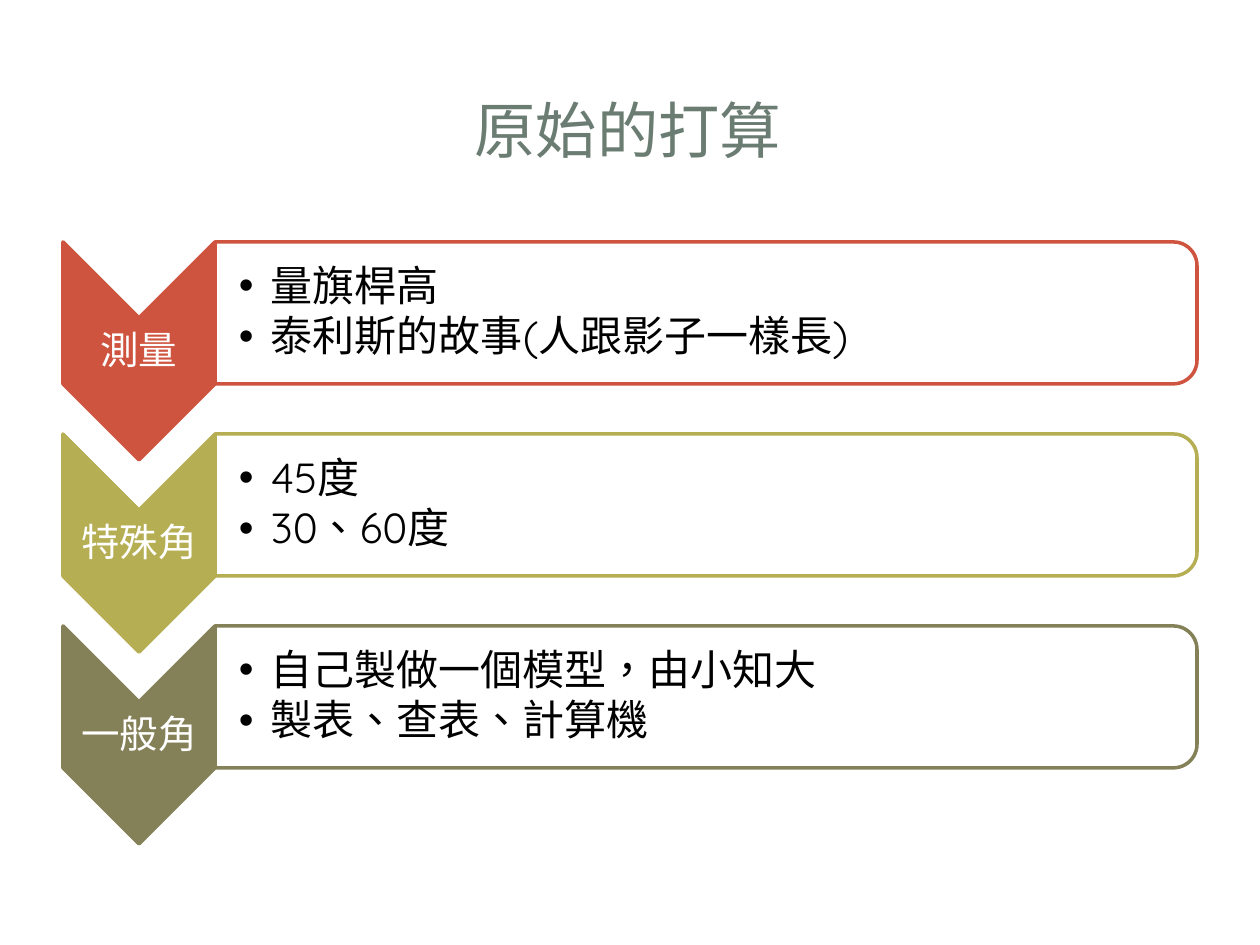
from lxml import etree
from pptx import Presentation
from pptx.dml.color import RGBColor
from pptx.enum.lang import MSO_LANGUAGE_ID
from pptx.enum.shapes import MSO_SHAPE
from pptx.enum.text import MSO_ANCHOR, PP_ALIGN
from pptx.oxml.ns import qn
from pptx.util import Pt

PX = 914400 // 126
CHEVRON, BAR = MSO_SHAPE.CHEVRON, MSO_SHAPE.ROUND_2_SAME_RECTANGLE
CENTER, LEFT = PP_ALIGN.CENTER, PP_ALIGN.LEFT
MIDDLE = MSO_ANCHOR.MIDDLE
CHINESE = MSO_LANGUAGE_ID.TRADITIONAL_CHINESE

ROWS = [
    ("測量", "CF543F", ["量旗桿高", "泰利斯的故事(人跟影子一樣長)"]),
    ("特殊角", "B5AE53", ["45度", "30、60度"]),
    ("一般角", "848058", ["自己製做一個模型，由小知大", "製表、查表、計算機"]),
]
PITCH = 192

prs = Presentation()
prs.slide_width, prs.slide_height = 1260 * PX, 945 * PX
slide = prs.slides.add_slide(prs.slide_layouts[6])


def add_turned(kind, box, fill, line):
    """Add a preset shape turned a quarter clockwise; box is before turning."""
    sp = slide.shapes.add_shape(kind, *(v * PX for v in box))
    sp.rotation = 90
    sp.shadow.inherit = False
    sp.fill.solid()
    sp.fill.fore_color.rgb = RGBColor.from_string(fill)
    sp.line.color.rgb = RGBColor.from_string(line)
    sp.line.width = Pt(2)


def add_text(lines, box, size, color, font="Quicksand", align=CENTER,
             inset=2, spacing=0.9):
    tb = slide.shapes.add_textbox(*(v * PX for v in box))
    tf = tb.text_frame
    tf.word_wrap = True
    tf.vertical_anchor = MIDDLE
    tf.margin_left = inset * PX
    tf.margin_right = tf.margin_top = tf.margin_bottom = 2 * PX
    tf.text = "\n".join(lines)
    for p in tf.paragraphs:
        p.alignment = align
        p.line_spacing = spacing
        for r in p.runs:
            r.font.size = Pt(size)
            r.font.name = font
            r.font.language_id = CHINESE
            r.font.color.rgb = RGBColor.from_string(color)
    return tf


add_text(["原始的打算"], (59, 57, 1138, 144), 35, "6B7D72", font="Arial", spacing=1.0)

for i, (label, color, points) in enumerate(ROWS):
    y = i * PITCH
    add_turned(CHEVRON, (30, 275 + y, 218, 152), color, color)
    add_text([label], (63, 319 + y, 152, 66), 22, "FFFFFF")
    add_turned(BAR, (635, -178 + y, 142, 982), "FFFFFF", color)
    tf = add_text(points, (215, 249 + y, 974, 128), 24, "000000",
                  align=LEFT, inset=24)
    for p in tf.paragraphs:
        p.space_after = Pt(3)
        pPr = p._p.get_or_add_pPr()
        pPr.set("marL", str(32 * PX))
        pPr.set("indent", str(-32 * PX))
        etree.SubElement(pPr, qn("a:buFont"), typeface="Arial")
        etree.SubElement(pPr, qn("a:buChar"), char="•")

prs.save("out.pptx")
